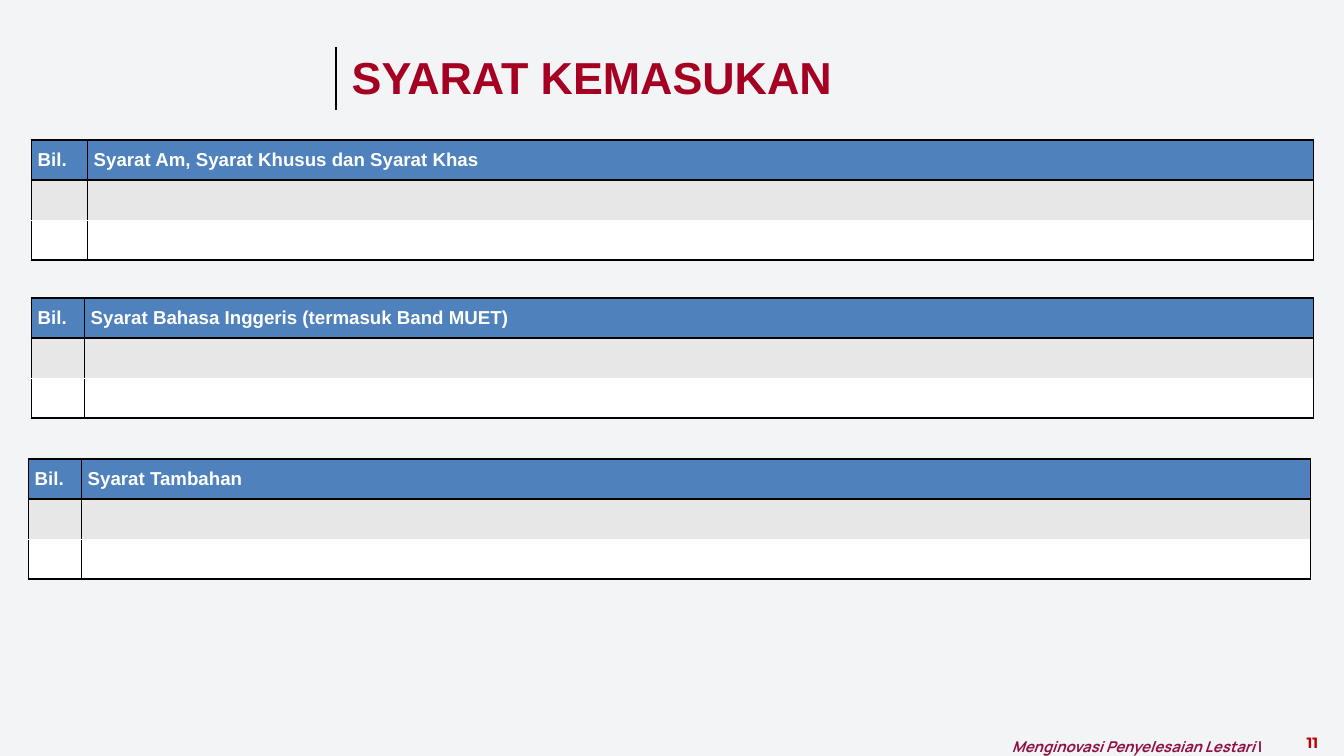
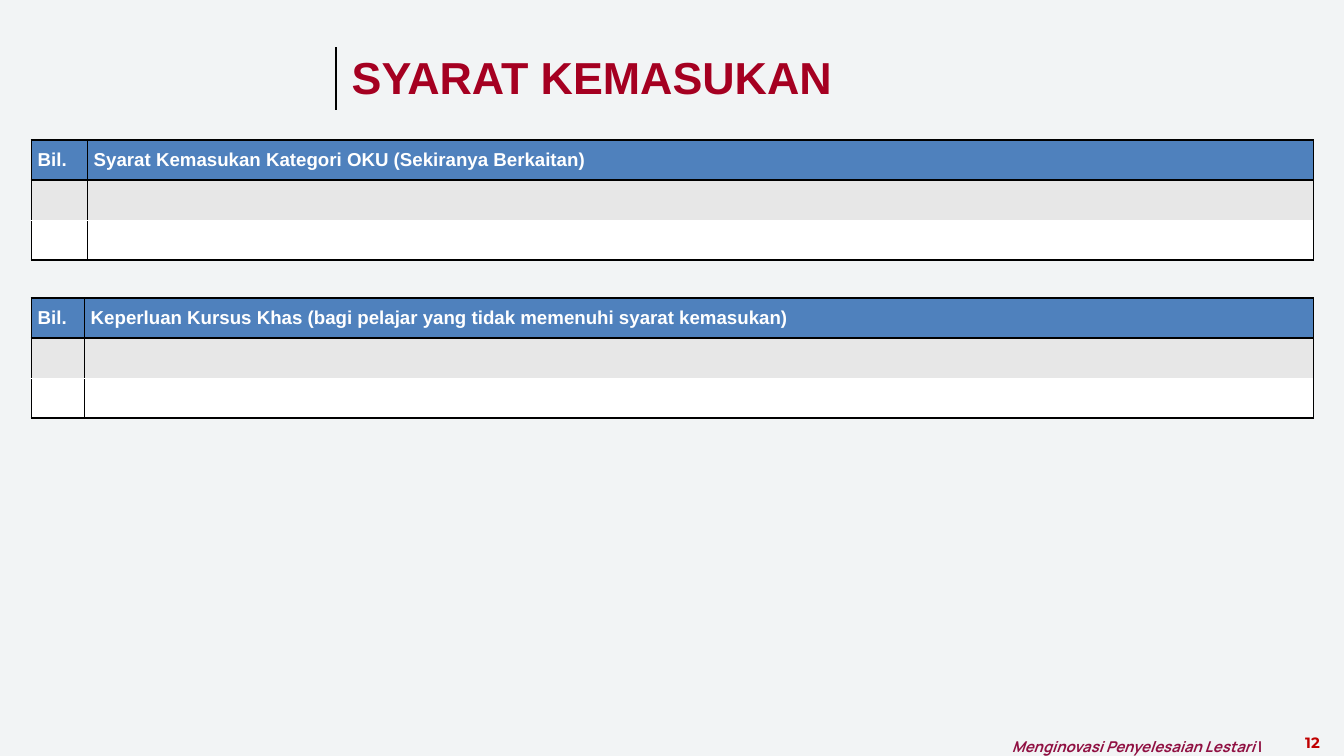
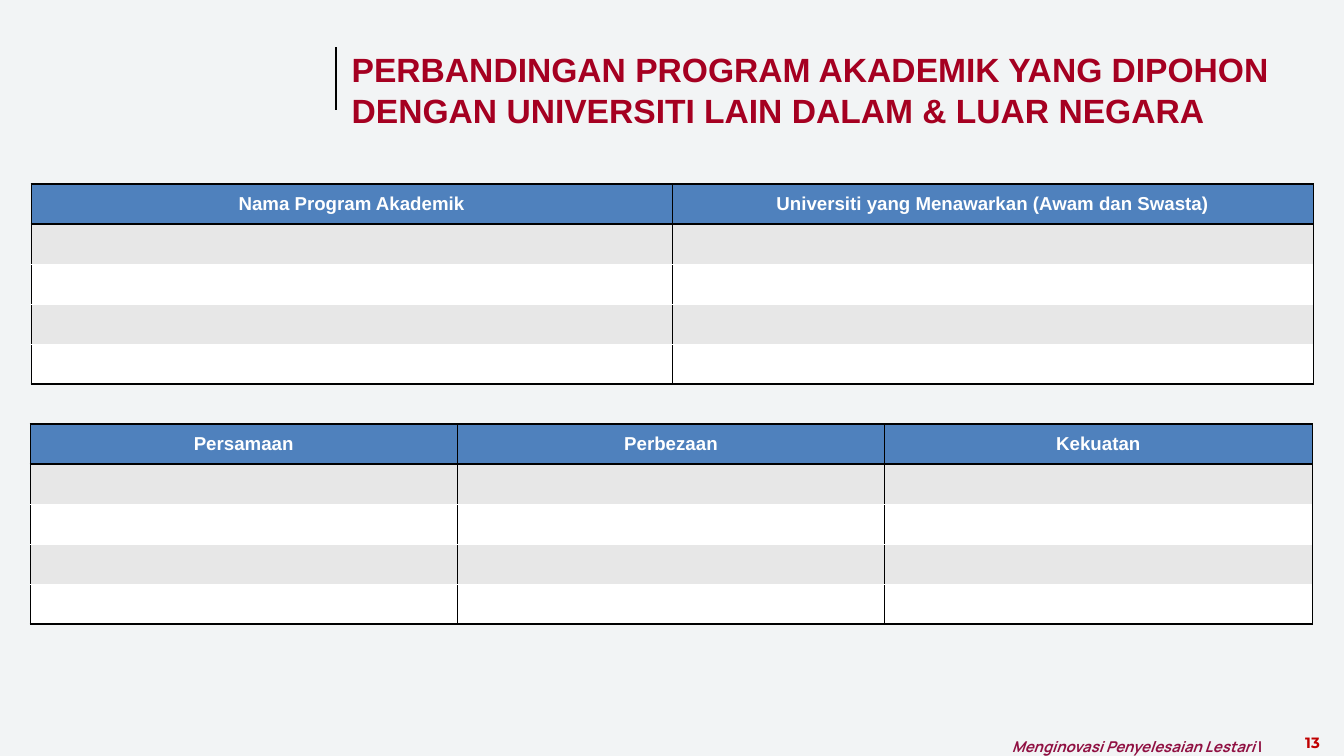
from lxml import etree
from pptx import Presentation
from pptx.dml.color import RGBColor
from pptx.enum.shapes import MSO_CONNECTOR
from pptx.enum.text import MSO_ANCHOR, MSO_AUTO_SIZE, PP_ALIGN
from pptx.oxml import parse_xml
from pptx.oxml.ns import nsdecls, qn
from pptx.util import Pt

LEFT, CENTER = PP_ALIGN.LEFT, PP_ALIGN.CENTER
TOP, MIDDLE = MSO_ANCHOR.TOP, MSO_ANCHOR.MIDDLE
GROW, NO_FIT = MSO_AUTO_SIZE.SHAPE_TO_FIT_TEXT, MSO_AUTO_SIZE.NONE
STRAIGHT = MSO_CONNECTOR.STRAIGHT

PX = 914400 / 67.2
COLORS = {
    "background": "F2F4F5", "title": "A50021", "footer": "901042",
    "number": "C00000", "header": "4F81BD", "header_text": "FFFFFF",
    "band": "E7E7E7", "plain": "FFFFFF", "line": "000000",
}
TABLE_W, ROW_H = 1282, 40
FIRST_NUMBER = 11

# Each table: left, top, column widths, header texts, body rows, alignment
SLIDES = [
    {"title": "SYARAT KEMASUKAN", "size": 48, "box": (345, 46, 859, 84), "tables": [
        (31, 140, (56, 1226), ("Bil.", "Syarat Am, Syarat Khusus dan Syarat Khas"), 2, LEFT),
        (31, 298, (53, 1229), ("Bil.", "Syarat Bahasa Inggeris (termasuk Band MUET)"), 2, LEFT),
        (28, 459, (53, 1229), ("Bil.", "Syarat Tambahan"), 2, LEFT),
    ]},
    {"title": "SYARAT KEMASUKAN", "size": 48, "box": (345, 46, 859, 84), "tables": [
        (31, 140, (56, 1226),
         ("Bil.", "Syarat Kemasukan Kategori OKU (Sekiranya Berkaitan)"), 2, LEFT),
        (31, 298, (53, 1229),
         ("Bil.", "Keperluan Kursus Khas (bagi pelajar yang tidak memenuhi syarat kemasukan)"),
         2, LEFT),
    ]},
    {"title": "PERBANDINGAN PROGRAM AKADEMIK YANG DIPOHON\n"
              "DENGAN UNIVERSITI LAIN DALAM & LUAR NEGARA",
     "size": 36, "box": (345, 46, 967, 99), "tables": [
        (31, 184, (TABLE_W / 2,) * 2,
         ("Nama Program Akademik", "Universiti yang Menawarkan (Awam dan Swasta)"), 4, CENTER),
        (30, 424, (TABLE_W / 3,) * 3, ("Persamaan", "Perbezaan", "Kekuatan"), 4, CENTER),
    ]},
]


def px(*values):
    """Turn pixel lengths into EMU."""
    return [round(v * PX) for v in values]


def set_font(p, name, size, color):
    p.font.name, p.font.size, p.font.bold = name, Pt(size), True
    p.font.color.rgb = RGBColor.from_string(COLORS[color])


prs = Presentation()
prs.slide_width, prs.slide_height = px(1344, 756)
fill = prs.slide_master.background.fill
fill.solid()
fill.fore_color.rgb = RGBColor.from_string(COLORS["background"])
title_only = prs.slide_layouts[5]

for number, content in enumerate(SLIDES, FIRST_NUMBER):
    slide = prs.slides.add_slide(title_only)

    # Title and the rule beside it
    title = slide.shapes.title
    title.left, title.top, title.width, title.height = px(*content["box"])
    tf = title.text_frame
    tf.text = content["title"]
    tf.vertical_anchor, tf.auto_size, tf.word_wrap = TOP, NO_FIT, True
    for p in tf.paragraphs:
        p.alignment = LEFT
        set_font(p, "Arial", content["size"], "title")
    rule = slide.shapes.add_connector(STRAIGHT, *px(336, 110, 336, 47))
    rule.line.color.rgb = RGBColor.from_string(COLORS["line"])
    rule.line.width = Pt(3)
    etree.SubElement(rule.element.spPr, qn("a:effectLst"))

    # Footer motto and slide number
    tf = slide.shapes.add_textbox(*px(1012, 730, 282, 26)).text_frame
    tf.margin_left = tf.margin_right = tf.margin_top = tf.margin_bottom = 0
    tf.word_wrap, tf.auto_size = True, GROW
    p = tf.paragraphs[0]
    p.line_spacing = 1.4
    set_font(p, "Manrope", 16, "footer")
    for text, italic in (("Menginovasi Penyelesaian Lestari ", True), ("|", False)):
        r = p.add_run()
        r.text, r.font.italic = text, italic
    tf = slide.shapes.add_textbox(*px(1281, 730, 63, 25)).text_frame
    tf.word_wrap, tf.auto_size = True, GROW
    p = tf.paragraphs[0]
    p.text, p.alignment = str(number), CENTER
    set_font(p, "Montserrat", 16, "number")

    for left, top, widths, headers, body_rows, align in content["tables"]:
        rows = body_rows + 1
        table = slide.shapes.add_table(
            rows, len(widths), *px(left, top, TABLE_W, rows * ROW_H)).table
        table.horz_banding = False
        for column, width in zip(table.columns, widths):
            column.width = px(width)[0]
        for cell, text in zip(table.rows[0].cells, headers):
            cell.vertical_anchor = MIDDLE
            p = cell.text_frame.paragraphs[0]
            p.text, p.alignment = text, align
            set_font(p, "Arial", 20, "header_text")
        for i, row in enumerate(table.rows):
            row.height = px(ROW_H)[0]
            color = "header" if i == 0 else "band" if i % 2 else "plain"
            borders = {"lnL": 1, "lnR": 1}
            if i == 0:
                borders["lnT"] = 2
            if i in (0, body_rows):
                borders["lnB"] = 2
            for cell in row.cells:
                cell.fill.solid()
                cell.fill.fore_color.rgb = RGBColor.from_string(COLORS[color])
                tcPr = cell._tc.get_or_add_tcPr()
                for k, (side, width) in enumerate(borders.items()):
                    tcPr.insert(k, parse_xml(
                        f'<a:{side} {nsdecls("a")} w="{Pt(width)}"><a:solidFill>'
                        f'<a:srgbClr val="{COLORS["line"]}"/></a:solidFill></a:{side}>'))

prs.save("out.pptx")
